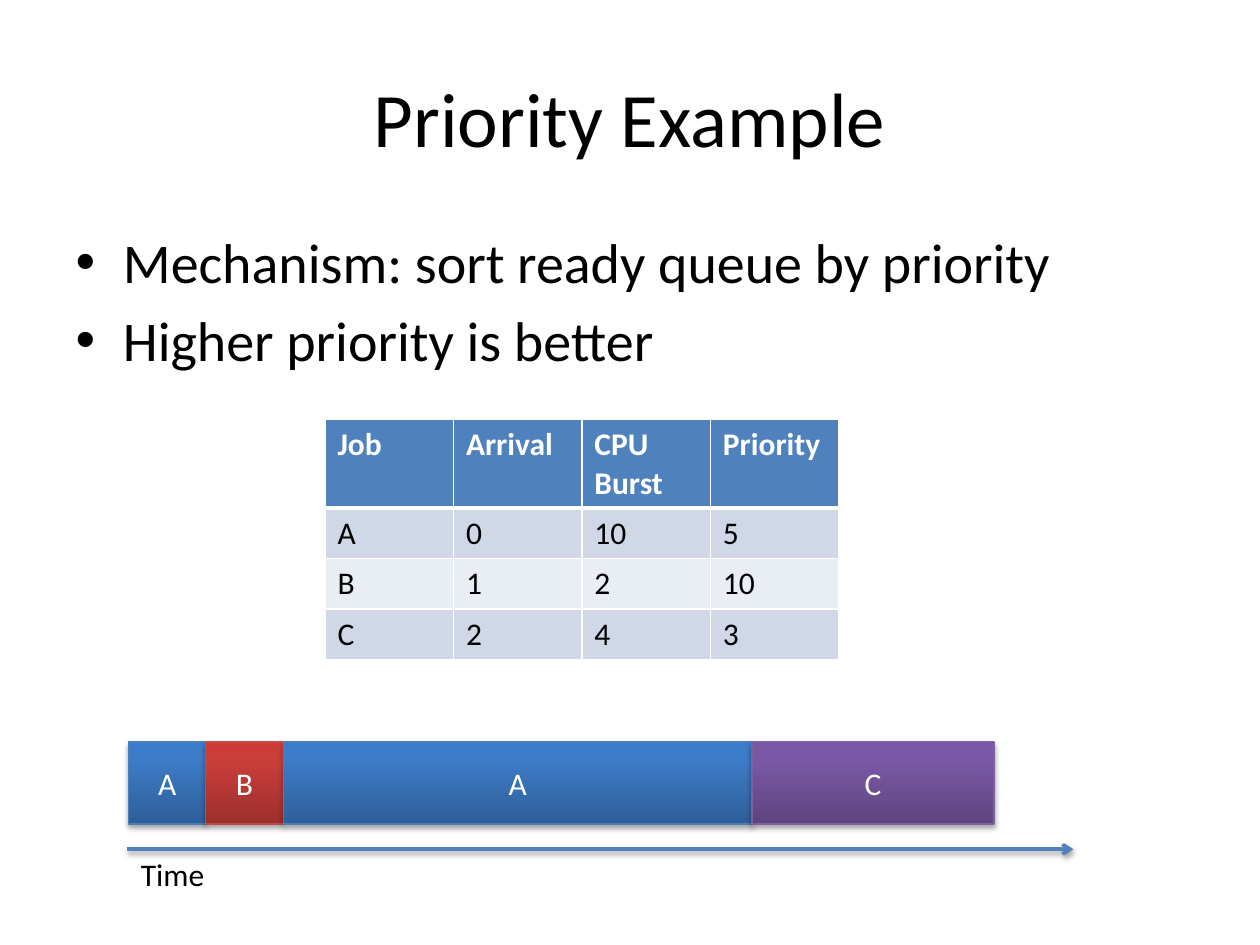
from lxml import etree
from pptx import Presentation
from pptx import util as u
from pptx.dml.color import RGBColor
from pptx.enum import shapes, text
from pptx.oxml.ns import qn

FONT = "Calibri"
COLORS = {
    "black": "000000",
    "white": "FFFFFF",
    "header": "4F81BD",
    "odd_row": "D0D8E8",
    "even_row": "E9EDF4",
    "arrow": "4F81BD",
}
# Per job: gradient from bottom to top, then outline
JOB_COLORS = {
    "A": (("2F5F99", "3D7CC7", "3A7CCB"), "4B7EBC"),
    "B": (("9C2F2D", "CB3E3A", "CE3B37"), "BF4C48"),
    "C": (("5F4480", "7B58A6", "7C57A8"), "7D60A0"),
}
GRADIENT_STOPS = (0, 80, 100)

BULLETS = ["Mechanism: sort ready queue by priority", "Higher priority is better"]
JOBS = [
    ["Job", "Arrival", "CPU Burst", "Priority"],
    ["A", "0", "10", "5"],
    ["B", "1", "2", "10"],
    ["C", "2", "4", "3"],
]
# Job and bar width in centimetres, in running order
SCHEDULE = [("A", 1.56), ("B", 1.56), ("A", 9.45), ("C", 4.88)]


def cm_box(*lengths):
    return [u.Cm(length) for length in lengths]


def add_node(parent, tag, **attributes):
    values = {name: str(value) for name, value in attributes.items()}
    return etree.SubElement(parent, qn(tag), values)


def style_text(paragraph, size, color, bold=None):
    font = paragraph.font
    font.name, font.size, font.bold = FONT, u.Pt(size), bold
    font.color.rgb = RGBColor.from_string(COLORS[color])


def set_line(line, color, width):
    line.color.rgb = RGBColor.from_string(color)
    line.width = u.Pt(width)


def add_shadow(shape, opacity, distance):
    """Append a soft downward shadow; call after fill and line are set."""
    effects = add_node(shape._element.spPr, "a:effectLst")
    shadow = add_node(effects, "a:outerShdw", blurRad=u.Pt(3.1), dist=u.Pt(distance),
                      dir=90 * 60000, rotWithShape=0)
    color = add_node(shadow, "a:srgbClr", val=COLORS["black"])
    add_node(color, "a:alpha", val=opacity * 1000)


def fill_placeholder(placeholder, box, lines, size):
    placeholder.left, placeholder.top, placeholder.width, placeholder.height = cm_box(*box)
    frame = placeholder.text_frame
    frame.text = "\n".join(lines)
    for paragraph in frame.paragraphs:
        style_text(paragraph, size, "black")


def set_cell_borders(cell, top, bottom):
    properties = cell._tc.get_or_add_tcPr()
    for side, width in (("L", 1), ("R", 1), ("T", top), ("B", bottom)):
        border = add_node(properties, f"a:ln{side}", w=u.Pt(width))
        fill = add_node(border, "a:solidFill")
        add_node(fill, "a:srgbClr", val=COLORS["white"])


def add_job_table(slide):
    frame = slide.shapes.add_table(len(JOBS), len(JOBS[0]), *cm_box(6.55, 8.46, 10.36, 4.82))
    table = frame.table
    for row_index, values in enumerate(JOBS):
        header = row_index == 0
        table.rows[row_index].height = u.Cm(1.76 if header else 1.02)
        fill = "header" if header else "odd_row" if row_index % 2 else "even_row"
        for column_index, value in enumerate(values):
            cell = table.cell(row_index, column_index)
            set_cell_borders(cell, 3 if row_index == 1 else 1, 3 if header else 1)
            cell.fill.solid()
            cell.fill.fore_color.rgb = RGBColor.from_string(COLORS[fill])
            cell.text = value
            style_text(cell.text_frame.paragraphs[0], 18, "white" if header else "black", header)


def add_job_bar(slide, job, left, width):
    shape = slide.shapes.add_shape(shapes.MSO_SHAPE.RECTANGLE, *cm_box(left, 14.96, width, 1.65))
    gradient_colors, outline = JOB_COLORS[job]

    # Three-stop gradient running upwards
    gradient = etree.Element(qn("a:gradFill"), rotWithShape="1")
    stops = add_node(gradient, "a:gsLst")
    for position, color in zip(GRADIENT_STOPS, gradient_colors):
        stop = add_node(stops, "a:gs", pos=position * 1000)
        add_node(stop, "a:srgbClr", val=color)
    add_node(gradient, "a:lin", ang=270 * 60000, scaled=0)
    shape._element.spPr.append(gradient)

    set_line(shape.line, outline, 0.75)
    add_shadow(shape, 35, 1.8)

    shape.text_frame.text = job
    shape.text_frame.vertical_anchor = text.MSO_ANCHOR.MIDDLE
    paragraph = shape.text_frame.paragraphs[0]
    paragraph.alignment = text.PP_ALIGN.CENTER
    style_text(paragraph, 18, "white")


def add_time_axis(slide):
    arrow = slide.shapes.add_connector(
        shapes.MSO_CONNECTOR.STRAIGHT, *cm_box(2.57, 17.12, 21.64, 17.12))
    set_line(arrow.line, COLORS["arrow"], 2)
    add_node(arrow.line._get_or_add_ln(), "a:tailEnd", type="arrow")
    add_shadow(arrow, 38, 1.6)

    label = slide.shapes.add_textbox(*cm_box(2.59, 17.12, 1.8, 1.02))
    frame = label.text_frame
    frame.word_wrap = False
    frame.auto_size = text.MSO_AUTO_SIZE.SHAPE_TO_FIT_TEXT
    frame.text = "Time"
    style_text(frame.paragraphs[0], 18, "black")


def main():
    presentation = Presentation()
    presentation.slide_width, presentation.slide_height = cm_box(25.4, 19.05)
    slide = presentation.slides.add_slide(presentation.slide_layouts[1])

    # Title and bullets
    fill_placeholder(slide.shapes.title, (1.27, 0.76, 22.86, 3.18), ["Priority Example"], 44)
    fill_placeholder(slide.placeholders[1], (1.27, 4.45, 22.86, 12.57), BULLETS, 32)

    # Schedule: each bar starts where the previous one ends
    left = 2.59
    for job, width in SCHEDULE:
        add_job_bar(slide, job, left, width)
        left += width
    add_time_axis(slide)

    # Job data
    add_job_table(slide)

    presentation.save("out.pptx")


if __name__ == "__main__":
    main()
